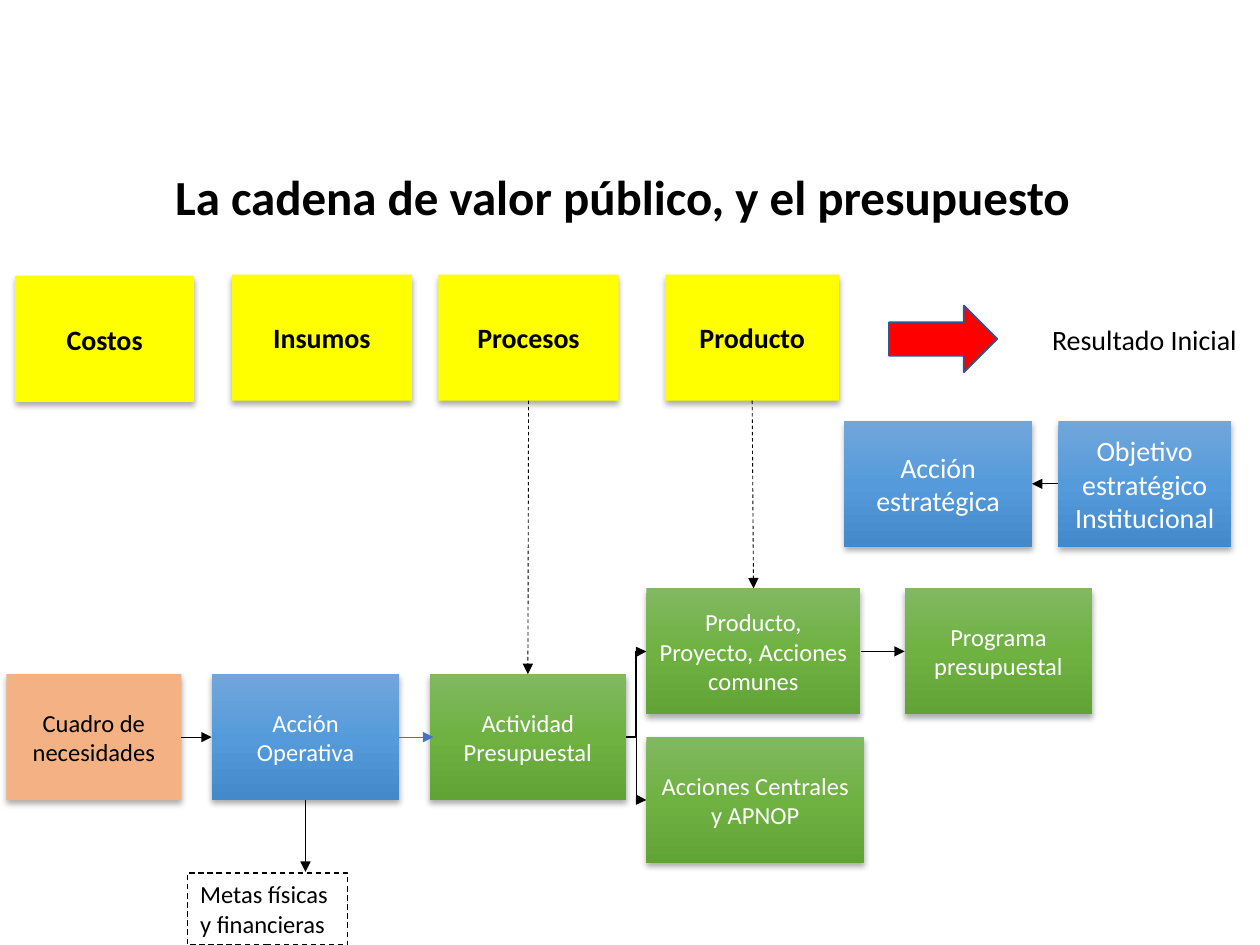
from copy import deepcopy

from lxml.etree import SubElement
from pptx import Presentation
from pptx.dml.color import RGBColor
from pptx.enum.dml import MSO_LINE
from pptx.enum.shapes import MSO_CONNECTOR, MSO_SHAPE
from pptx.enum.text import MSO_ANCHOR, PP_ALIGN
from pptx.oxml.ns import qn
from pptx.util import Inches, Pt

COLORS = {
    "black": "000000", "white": "FFFFFF", "yellow": "FFFF00", "orange": "F4B183",
    "red": "FF0000", "red_edge": "325491", "link_blue": "4472C4",
}
COLORS = {name: RGBColor.from_string(value) for name, value in COLORS.items()}
GRADIENTS = {
    "blue": ("71A6DB", "559BDB", "448ACA"),
    "green": ("81B861", "6FB242", "62A336"),
}

prs = Presentation()
prs.slide_width, prs.slide_height = Inches(10), Inches(7.5)
slide = prs.slides.add_slide(prs.slide_layouts[6])

# Grid of 100 columns by 75 rows
COL = prs.slide_width / 100
ROW = prs.slide_height / 75
BOX_ROWS = 10
TOP, STRATEGY, PROGRAM, OPERATION, CENTRAL = 21.8, 33.4, 46.7, 53.5, 58.5


def place(left, top, width, height):
    return int(left * COL), int(top * ROW), int(width * COL), int(height * ROW)


def write(shape, lines, size, color="black", bold=False, align=PP_ALIGN.CENTER):
    frame = shape.text_frame
    frame.text = "\n".join(lines)
    for paragraph in frame.paragraphs:
        paragraph.alignment = align
        paragraph.font.name = "Calibri"
        paragraph.font.size = Pt(size)
        paragraph.font.bold = bold
        paragraph.font.color.rgb = COLORS[color]


title = slide.shapes.add_textbox(*place(1.2, 12.7, 96.4, 5.7))
title.text_frame.word_wrap = True
write(title, ["La cadena de valor público, y el presupuesto"], 28, bold=True)

# Key: lines, left, top, width, fill, text size, text colour, bold
steps = {
    "costs": (["Costos"], 1.2, TOP + 0.1, 14.2, "yellow", 16, "black", True),
    "inputs": (["Insumos"], 18.4, TOP, 14.3, "yellow", 16, "black", True),
    "processes": (["Procesos"], 34.8, TOP, 14.3, "yellow", 16, "black", True),
    "product": (["Producto"], 52.8, TOP, 13.8, "yellow", 16, "black", True),
    "objective": (["Objetivo estratégico", "Institucional"],
                  84, STRATEGY, 13.7, "blue", 16, "white", False),
    "strategic": (["Acción estratégica"], 67, STRATEGY, 14.9, "blue", 16, "white", False),
    "program": (["Programa presupuestal"], 71.8, PROGRAM, 14.9, "green", 14, "white", False),
    "project": (["Producto, Proyecto, Acciones comunes"],
                51.3, PROGRAM, 17, "green", 14, "white", False),
    "activity": (["Actividad Presupuestal"], 34.1, OPERATION, 15.6, "green", 14, "white", False),
    "central": (["Acciones Centrales y APNOP"], 51.3, CENTRAL, 17.3, "green", 14, "white", False),
    "operative": (["Acción Operativa"], 16.8, OPERATION, 14.9, "blue", 14, "white", False),
    "needs": (["Cuadro de necesidades"], 0.5, OPERATION, 13.9, "orange", 14, "black", False),
}
boxes = {}
for key, (lines, left, top, width, fill, size, color, bold) in steps.items():
    box = slide.shapes.add_shape(MSO_SHAPE.RECTANGLE, *place(left, top, width, BOX_ROWS))
    box.line.fill.background()
    if fill in GRADIENTS:
        box.fill.gradient()
        box.fill.gradient_angle = 270
        stop_list = box._element.spPr.find(qn("a:gradFill")).find(qn("a:gsLst"))
        stop_list.insert(1, deepcopy(stop_list[0]))
        for stop, position, value in zip(box.fill.gradient_stops, (0, 0.5, 1), GRADIENTS[fill]):
            stop.position = position
            stop.color.rgb = RGBColor.from_string(value)
    else:
        box.fill.solid()
        box.fill.fore_color.rgb = COLORS[fill]
    box.shadow.inherit = False
    effects = box._element.spPr.find(qn("a:effectLst"))
    shadow = SubElement(effects, qn("a:outerShdw"), blurRad=str(Pt(3.5)), dist=str(Pt(2.2)),
                        dir="5400000", algn="ctr", rotWithShape="0")
    shade = SubElement(shadow, qn("a:srgbClr"), val="000000")
    SubElement(shade, qn("a:alpha"), val="32000")
    box.text_frame.word_wrap = True
    box.text_frame.vertical_anchor = MSO_ANCHOR.MIDDLE
    write(box, lines, size, color, bold)
    boxes[key] = box

result_arrow = slide.shapes.add_shape(MSO_SHAPE.DOWN_ARROW, *place(72.2, 22.6, 5.3, 8.6))
result_arrow.rotation = 270
result_arrow.shadow.inherit = False
result_arrow.fill.solid()
result_arrow.fill.fore_color.rgb = COLORS["red"]
result_arrow.line.color.rgb = COLORS["red_edge"]
result_arrow.line.width = Pt(1)

result = slide.shapes.add_textbox(*place(81, 25.1, 19, 3.7))
result.text_frame.word_wrap = True
result.text_frame.margin_left = Inches(0.25)
result.text_frame.margin_right = 0
write(result, ["Resultado Inicial"], 16, align=PP_ALIGN.LEFT)

goals = slide.shapes.add_textbox(*place(14.9, 69.3, 12.7, 5.7))
goals.text_frame.word_wrap = False
goals.line.color.rgb = COLORS["black"]
goals.line.width = Pt(0.75)
goals.line.dash_style = MSO_LINE.DASH
write(goals, ["Metas físicas", "y financieras"], 14, align=PP_ALIGN.LEFT)

# Start box and side, end box and side (or a free end point in grid units), look
SIDE_TOP, SIDE_LEFT, SIDE_BOTTOM, SIDE_RIGHT = range(4)
STRAIGHT, ELBOW = MSO_CONNECTOR.STRAIGHT, MSO_CONNECTOR.ELBOW
links = [
    ("operative", SIDE_BOTTOM, (24.25, 69.2), None, STRAIGHT, "black", 0.5, False),
    ("product", SIDE_BOTTOM, "project", SIDE_TOP, STRAIGHT, "black", 0.5, True),
    ("operative", SIDE_RIGHT, (34.4, 58.5), None, STRAIGHT, "link_blue", 0.5, False),
    ("needs", SIDE_RIGHT, "operative", SIDE_LEFT, STRAIGHT, "black", 0.5, False),
    ("activity", SIDE_RIGHT, "project", SIDE_LEFT, ELBOW, "black", 1, False),
    ("activity", SIDE_RIGHT, "central", SIDE_LEFT, ELBOW, "black", 0.5, False),
    ("project", SIDE_RIGHT, "program", SIDE_LEFT, STRAIGHT, "black", 0.5, False),
    ("objective", SIDE_LEFT, "strategic", SIDE_RIGHT, STRAIGHT, "black", 0.5, False),
    ("processes", SIDE_BOTTOM, "activity", SIDE_TOP, STRAIGHT, "black", 0.5, True),
]
for start, start_side, end, end_side, kind, color, weight, dashed in links:
    link = slide.shapes.add_connector(kind, 0, 0, 0, 0)
    link.begin_connect(boxes[start], start_side)
    if end in boxes:
        link.end_connect(boxes[end], end_side)
    else:
        link.end_x, link.end_y = int(end[0] * COL), int(end[1] * ROW)
    link.line.color.rgb = COLORS[color]
    link.line.width = Pt(weight)
    if dashed:
        link.line.dash_style = MSO_LINE.DASH
    SubElement(link.line._get_or_add_ln(), qn("a:tailEnd"), type="triangle")
    SubElement(link._element.spPr, qn("a:effectLst"))

prs.save("out.pptx")
